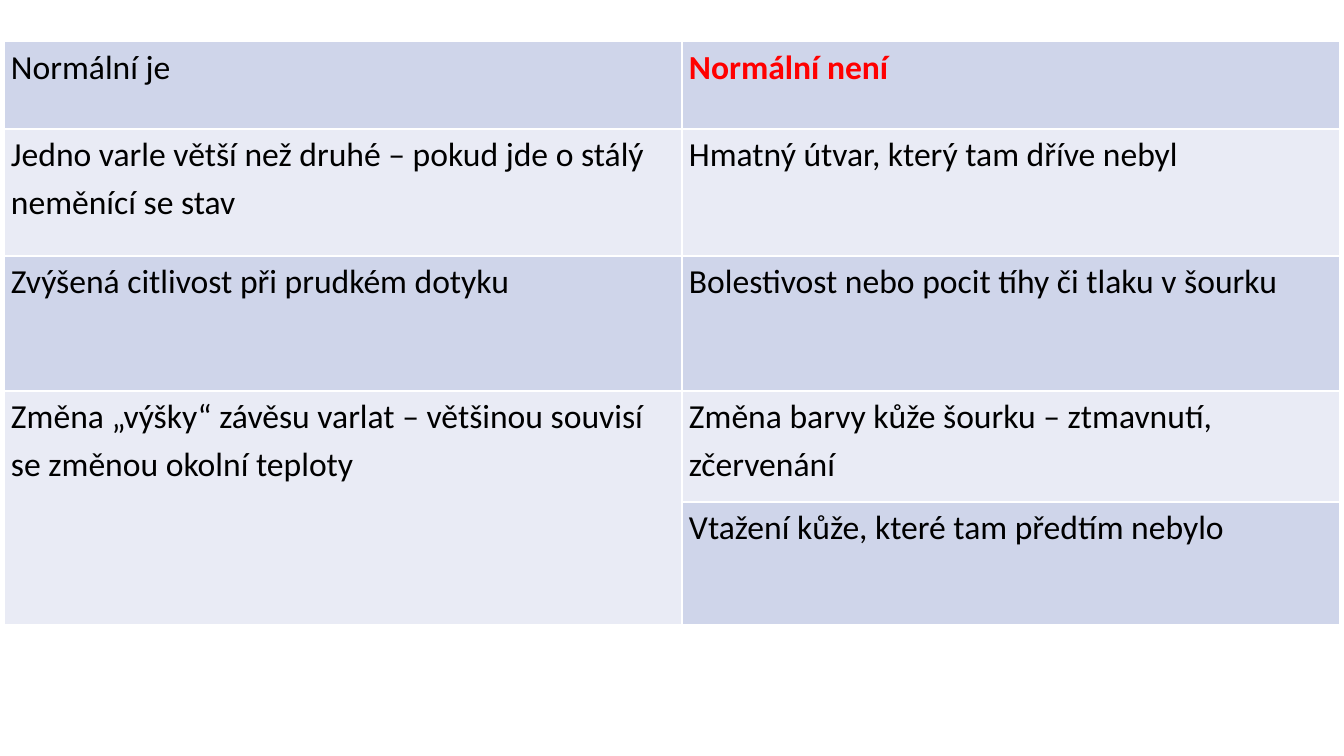
from lxml import etree
from pptx import Presentation
from pptx.dml.color import RGBColor
from pptx.oxml.ns import qn
from pptx.util import Pt

PX = 914400 / 100.8
COLORS = {"dark": "CFD5EA", "light": "E9EBF5", "border": "FFFFFF",
          "text": "000000", "warning": "FF0000"}
COLS = [678, 658]
ROWS = [88, 127, 135, 111, 123]
TEXTS = [
    ("Normální je", "Normální není"),
    ("Jedno varle větší než druhé – pokud jde o stálý neměnící se stav",
     "Hmatný útvar, který tam dříve nebyl"),
    ("Zvýšená citlivost při prudkém dotyku",
     "Bolestivost nebo pocit tíhy či tlaku v šourku"),
    ("Změna „výšky“ závěsu varlat – většinou souvisí se změnou okolní teploty",
     "Změna barvy kůže šourku – ztmavnutí, zčervenání"),
    ("", "Vtažení kůže, které tam předtím nebylo"),
]
MARGINS = {"margin_left": 7, "margin_right": 7, "margin_top": 0, "margin_bottom": 0}
FONT = {"name": "Calibri", "size": Pt(24)}


def px(n):
    return round(n * PX)


def add_borders(cell):
    tcPr = cell._tc.get_or_add_tcPr()
    for i, side in enumerate(("a:lnL", "a:lnR", "a:lnT", "a:lnB")):
        ln = etree.Element(qn(side), w=str(Pt(1)))
        fill = etree.SubElement(ln, qn("a:solidFill"))
        etree.SubElement(fill, qn("a:srgbClr"), val=COLORS["border"])
        tcPr.insert(i, ln)


prs = Presentation()
prs.slide_width, prs.slide_height = px(1344), px(756)
s = prs.slides.add_slide(prs.slide_layouts[6])

table = s.shapes.add_table(len(ROWS), len(COLS), px(4), px(41),
                           px(sum(COLS)), px(sum(ROWS))).table
table.first_row = False
table.horz_banding = False
for col, width in zip(table.columns, COLS):
    col.width = px(width)
for row, height in zip(table.rows, ROWS):
    row.height = px(height)
table.cell(3, 0).merge(table.cell(4, 0))

for i, texts in enumerate(TEXTS):
    for j, text in enumerate(texts):
        cell = table.cell(i, j)
        for name, value in MARGINS.items():
            setattr(cell, name, px(value))
        cell.fill.solid()
        cell.fill.fore_color.rgb = RGBColor.from_string(COLORS["light" if i % 2 else "dark"])
        add_borders(cell)
        if cell.is_spanned:
            continue
        warning = (i, j) == (0, 1)
        p = cell.text_frame.paragraphs[0]
        p.line_spacing = 1.15
        p.space_after = Pt(10)
        r = p.add_run()
        r.text = text
        for name, value in FONT.items():
            setattr(r.font, name, value)
        r.font.bold = warning
        r.font.color.rgb = RGBColor.from_string(COLORS["warning" if warning else "text"])

prs.save("out.pptx")
